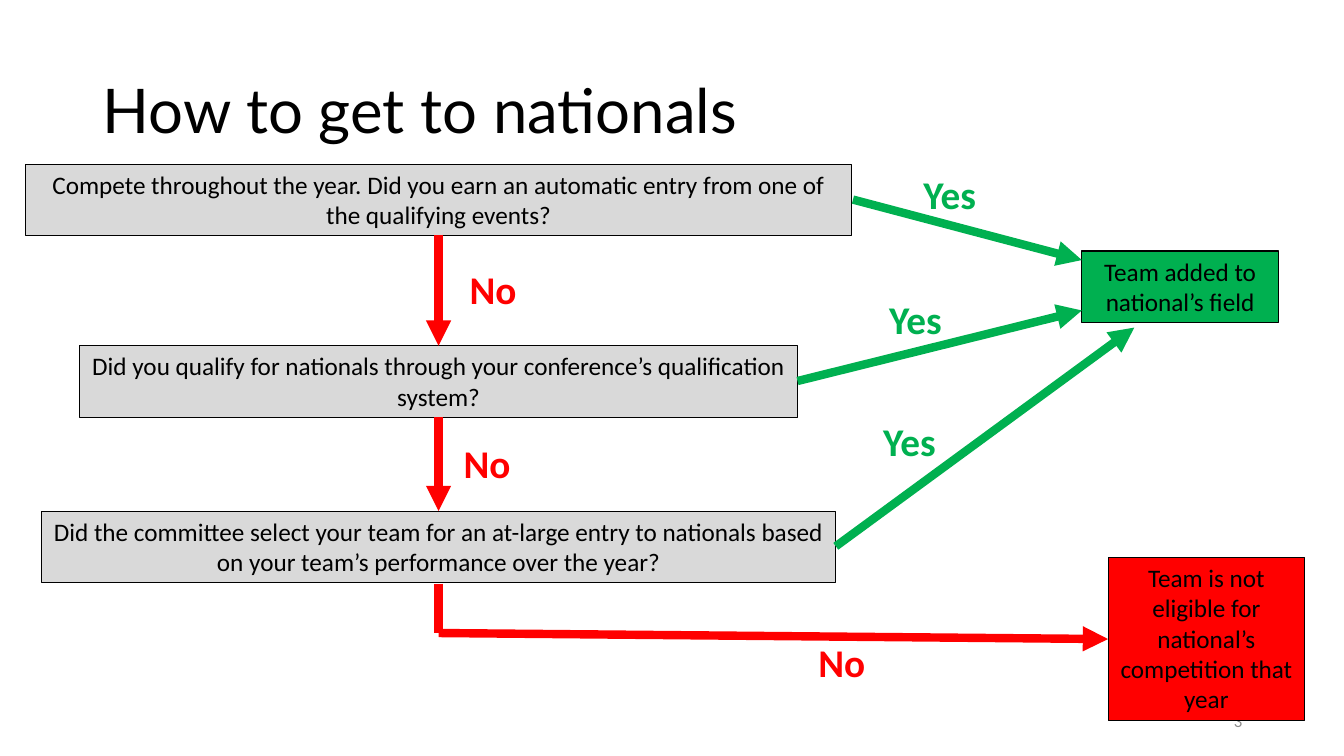
from pptx import Presentation
from pptx import util as u
from pptx.dml.color import RGBColor
from pptx.enum import shapes, text
from pptx.oxml.ns import qn
from lxml import etree

COLORS = {
    "black": "000000",
    "gray": "D9D9D9",
    "number": "8C8C8C",
    "yes": "00B050",
    "no": "FF0000",
}


def rgb(name):
    return RGBColor.from_string(COLORS[name])


def write(sp, content, size=18, color="black", font="Calibri", bold=False,
          align=text.PP_ALIGN.CENTER, anchor=text.MSO_ANCHOR.TOP, spacing=None):
    tf = sp.text_frame
    tf.word_wrap = True
    tf.vertical_anchor = anchor
    p = tf.paragraphs[0]
    p.alignment = align
    p.line_spacing = spacing
    r = p.add_run()
    r.text = content
    r.font.size = u.Pt(size)
    r.font.name = font
    r.font.bold = bold
    r.font.color.rgb = rgb(color)


class FlowSlide:
    border = u.Pt(0.75)
    arrow_width = u.Pt(6)
    label_size = (1.24, 0.57)

    def __init__(self, prs):
        self.s = prs.slides.add_slide(prs.slide_layouts[6])

    def label(self, content, left, top, width, height, **fmt):
        sp = self.s.shapes.add_textbox(*map(u.Inches, (left, top, width, height)))
        write(sp, content, **fmt)

    def answer(self, kind, left, top):
        self.label(kind.capitalize(), left, top, *self.label_size,
                   size=28, color=kind, bold=True)

    def box(self, content, left, top, width, height=0.71, fill="gray"):
        sp = self.s.shapes.add_shape(shapes.MSO_SHAPE.RECTANGLE,
                                     *map(u.Inches, (left, top, width, height)))
        sp.shadow.inherit = False
        sp.fill.solid()
        sp.fill.fore_color.rgb = rgb(fill)
        sp.line.color.rgb = rgb("black")
        sp.line.width = self.border
        write(sp, content)

    def arrow(self, kind, start, end, head=True):
        cx = self.s.shapes.add_connector(shapes.MSO_CONNECTOR.STRAIGHT,
                                         *map(u.Inches, start + end))
        cx.line.color.rgb = rgb(kind)
        cx.line.width = self.arrow_width
        if head:
            etree.SubElement(cx.line._get_or_add_ln(), qn("a:tailEnd"), type="triangle")
        etree.SubElement(cx._element.spPr, qn("a:effectLst"))


def main():
    prs = Presentation()
    prs.slide_width, prs.slide_height = u.Inches(13.33), u.Inches(7.5)
    flow = FlowSlide(prs)

    flow.label("How to get to nationals", 0.92, 0.4, 11.5, 1.45, size=44, font="Lato",
               align=text.PP_ALIGN.LEFT, anchor=text.MSO_ANCHOR.MIDDLE, spacing=0.9)
    flow.label("3", 9.42, 6.95, 3, 0.4, size=12, color="number",
               align=text.PP_ALIGN.RIGHT, anchor=text.MSO_ANCHOR.MIDDLE)

    center = 4.35
    questions = [
        ("Compete throughout the year. Did you earn an automatic entry "
         "from one of the qualifying events?", 1.63, 8.19),
        ("Did you qualify for nationals through your conference’s "
         "qualification system?", 3.43, 7.13),
        ("Did the committee select your team for an at-large entry to nationals "
         "based on your team’s performance over the year?", 5.07, 7.88),
    ]
    for content, top, width in questions:
        flow.box(content, center - width / 2, top, width)
    flow.box("Team added to national’s field", 10.73, 2.49, 1.95, fill="yes")
    flow.box("Team is not eligible for national’s competition that year",
             10.99, 5.53, 1.95, 1.62, fill="no")

    corner = (center, 6.28)
    flow.arrow("no", (center, 2.33), (center, 3.43))
    flow.arrow("no", (center, 4.14), (center, 5.07))
    flow.arrow("no", (center, 5.79), corner, head=False)
    flow.arrow("no", corner, (10.99, 6.34))
    for start, end in [((8.46, 1.98), (10.73, 2.58)),
                       ((7.91, 3.78), (10.73, 3.08)),
                       ((8.29, 5.42), (11.25, 3.25))]:
        flow.arrow("yes", start, end)

    for kind, left, top in [("yes", 8.8, 1.64), ("yes", 8.46, 2.88), ("yes", 8.4, 4.09),
                            ("no", 4.27, 2.58), ("no", 4.21, 4.31), ("no", 7.73, 6.28)]:
        flow.answer(kind, left, top)

    prs.save("out.pptx")


if __name__ == "__main__":
    main()
